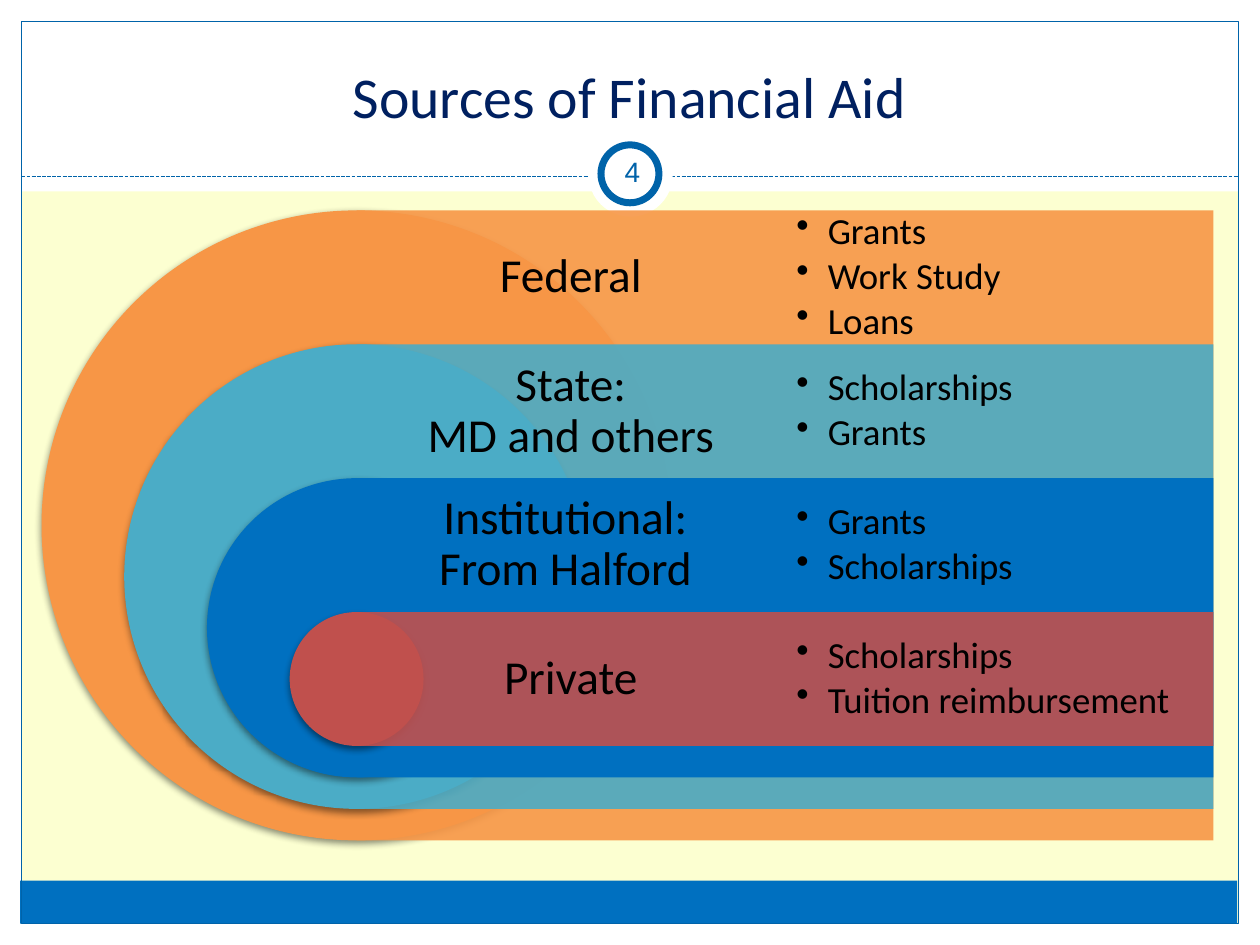
import pptx
import pptx.dml.color
import pptx.enum.dml
import pptx.enum.shapes
import pptx.enum.text
import pptx.oxml
import pptx.oxml.ns
import pptx.util

Inches = pptx.util.Inches
Pt = pptx.util.Pt
Shape = pptx.enum.shapes.MSO_SHAPE
Align = pptx.enum.text.PP_ALIGN
Anchor = pptx.enum.text.MSO_ANCHOR
NAMESPACE = pptx.oxml.ns.nsdecls("a")

TITLE = "Sources of Financial Aid"
PAGE_NUMBER = "4"
SOURCES = [
    ("Federal", "F79646", 90, ["Grants", "Work Study", "Loans"]),
    ("State:\nMD and others", "4BACC6", 90, ["Scholarships", "Grants"]),
    ("Institutional: \nFrom Halford ", "0070C0", 100, ["Grants", "Scholarships"]),
    ("Private", "C0504D", 90, ["Scholarships", "Tuition reimbursement"]),
]
FRAME_PANELS = [
    (0, 7.33, 10, 0.17, "FFFFFF"),
    (0, 0, 10, 1.52, "FFFFFF"),
    (0, 0, 0.17, 7.5, "FFFFFF"),
    (9.83, 0, 0.17, 7.5, "FFFFFF"),
    (0.16, 6.99, 9.66, 0.34, "0070C0"),
]
ACCENT = "0063A9"
CENTER_X, TOP, DIAMETER = 2.83, 1.67, 5
BAND_WIDTH, BAND_HEIGHT, BOTTOM_STEP = 6.8, 1.0625, 0.25


def color(value):
    return pptx.dml.color.RGBColor.from_string(value)


def paint(target, value):
    target.solid()
    target.fore_color.rgb = color(value)


def add_xml(parent, tag, attributes="", content=""):
    parent.append(pptx.oxml.parse_xml(f"<a:{tag} {NAMESPACE} {attributes}>{content}</a:{tag}>"))


def add_shape(page, kind, left, top, width, height, fill=None, line=None, weight=0.75):
    shape = page.shapes.add_shape(kind, Inches(left), Inches(top), Inches(width), Inches(height))
    shape.shadow.inherit = False
    if fill:
        paint(shape.fill, fill)
    else:
        shape.fill.background()
    if line:
        paint(shape.line.fill, line)
        shape.line.width = Pt(weight)
    else:
        shape.line.fill.background()
    return shape


def set_text(box, lines, size, font="Calibri", ink="000000", align=Align.CENTER,
             inset=0.11, spacing=0.9, anchor=Anchor.MIDDLE):
    frame = box.text_frame
    frame.word_wrap = True
    frame.vertical_anchor = anchor
    frame.margin_left = frame.margin_right = Inches(inset)
    frame.margin_top = frame.margin_bottom = Inches(inset)
    for index, line in enumerate(lines):
        para = frame.paragraphs[0] if index == 0 else frame.add_paragraph()
        para.text = line
        para.alignment = align
        para.line_spacing = spacing
        para.font.size = Pt(size)
        para.font.name = font
        para.font.color.rgb = color(ink)
    return frame.paragraphs


def add_text(page, left, top, width, height, lines, size, **style):
    box = page.shapes.add_textbox(Inches(left), Inches(top), Inches(width), Inches(height))
    return set_text(box, lines, size, **style)


def add_frame(page):
    for *place, fill in FRAME_PANELS:
        add_shape(page, Shape.RECTANGLE, *place, fill=fill)
    add_shape(page, Shape.RECTANGLE, 0.17, 0.17, 9.66, 7.16, line=ACCENT)
    rule = page.shapes.add_connector(pptx.enum.shapes.MSO_CONNECTOR.STRAIGHT,
                                     Inches(0.17), Inches(1.4), Inches(9.83), Inches(1.4))
    paint(rule.line.fill, ACCENT)
    rule.line.width = Pt(0.75)
    rule.line.dash_style = pptx.enum.dml.MSO_LINE.SQUARE_DOT
    add_xml(rule._element.spPr, "effectLst")
    add_shape(page, Shape.OVAL, 4.67, 1.05, 0.67, 0.67, fill="FFFFFF")
    add_shape(page, Shape.OVAL, 4.77, 1.15, 0.46, 0.46, fill="FFFFFF", line=ACCENT, weight=4)


def add_title(page):
    title = page.shapes.title
    title.left, title.top, title.width, title.height = map(Inches, (0.33, 0.25, 9.33, 0.83))
    set_text(title, [TITLE], 33, ink="002060", inset=0.05, spacing=1, anchor=Anchor.BOTTOM)
    title._element.getparent().append(title._element)


def add_source(page, index, label, fill, opacity, aids):
    top = TOP + index * BAND_HEIGHT
    diameter = DIAMETER - index * (BAND_HEIGHT + BOTTOM_STEP)
    column = BAND_WIDTH / 2
    circle = add_shape(page, Shape.OVAL, CENTER_X - diameter / 2, top, diameter, diameter, fill=fill)
    effects = circle._element.spPr.find(pptx.oxml.ns.qn("a:effectLst"))
    add_xml(effects, "outerShdw", 'blurRad="50800" dist="25400" dir="5400000" rotWithShape="0"',
            '<a:srgbClr val="000000"><a:alpha val="45000"/></a:srgbClr>')
    band = add_shape(page, Shape.RECTANGLE, CENTER_X, top, BAND_WIDTH, diameter, fill=fill)
    if opacity < 100:
        tint = band._element.spPr.find(pptx.oxml.ns.qn("a:solidFill"))[0]
        add_xml(tint, "alpha", f'val="{opacity * 1000}"')
    add_text(page, CENTER_X, top, column, BAND_HEIGHT, [label], 27)
    bullets = add_text(page, CENTER_X + column, top, column, BAND_HEIGHT, aids, 21,
                       align=Align.LEFT, inset=0.09)
    for para in bullets:
        para.level = 1
        para.space_after = Pt(3)
        properties = para._p.get_or_add_pPr()
        properties.set("marL", str(Inches(0.25)))
        properties.set("indent", str(Inches(-0.25)))
        bullet = pptx.oxml.parse_xml(f'<a:buChar {NAMESPACE} char="•"/>')
        properties.find(pptx.oxml.ns.qn("a:defRPr")).addprevious(bullet)


def main():
    deck = pptx.Presentation()
    deck.slide_width, deck.slide_height = Inches(10), Inches(7.5)
    page = deck.slides.add_slide(deck.slide_layouts[5])
    paint(page.background.fill, "FCFFD1")
    add_frame(page)
    add_title(page)
    add_text(page, 4.77, 1.12, 0.5, 0.48, [PAGE_NUMBER], 16, font="Arial",
             ink="0062A9", inset=0.05, spacing=1)
    for index, source in enumerate(SOURCES):
        add_source(page, index, *source)
    deck.save("out.pptx")


if __name__ == "__main__":
    main()
